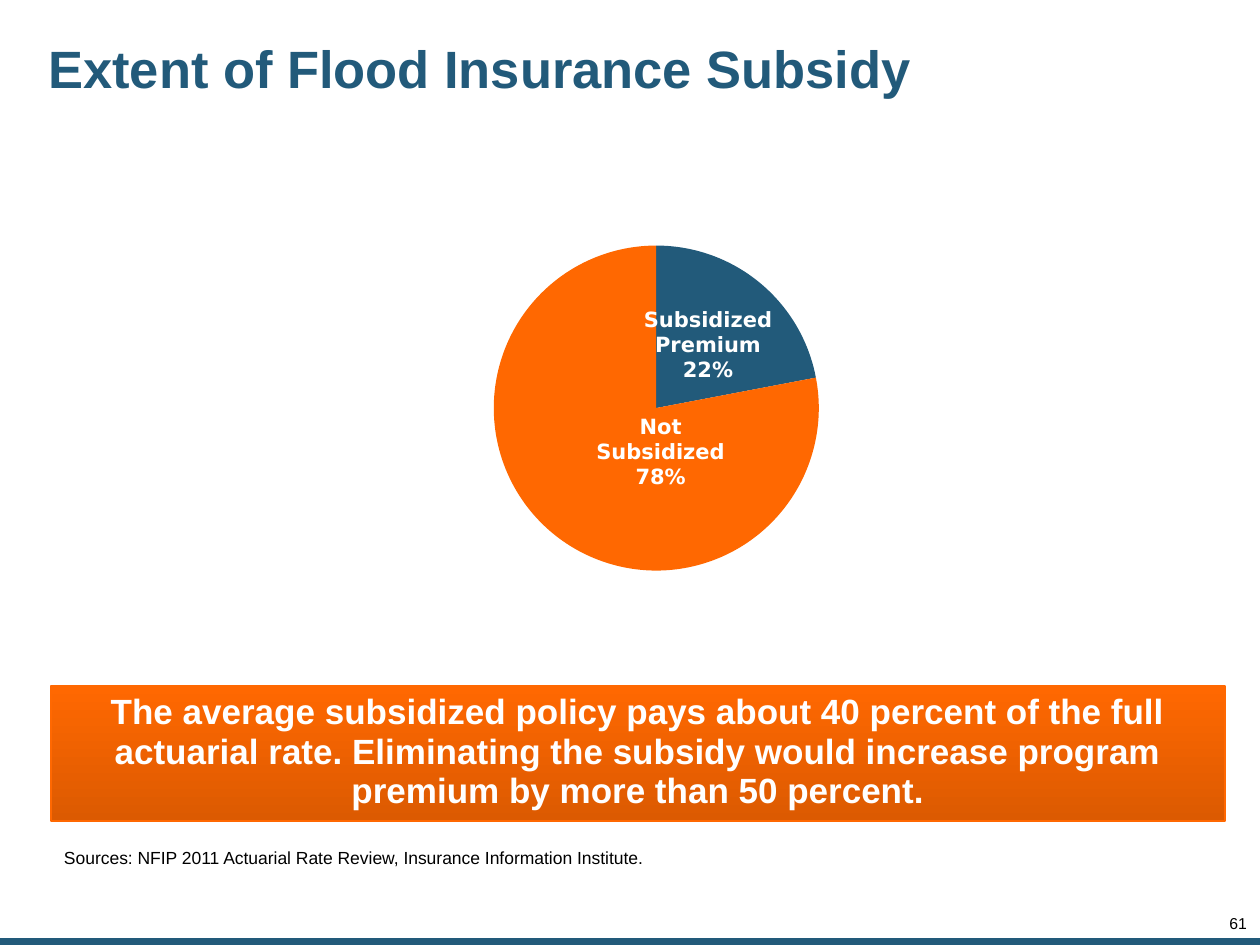
from copy import deepcopy

from lxml import etree
from pptx import Presentation
from pptx.chart.data import CategoryChartData
from pptx.dml.color import RGBColor
from pptx.enum.chart import XL_CHART_TYPE, XL_LABEL_POSITION
from pptx.enum.shapes import MSO_SHAPE
from pptx.enum.text import MSO_ANCHOR, PP_ALIGN
from pptx.oxml.ns import qn
from pptx.util import Pt

NAVY = RGBColor(0x22, 0x5A, 0x7A)
ORANGE = RGBColor(0xFF, 0x68, 0x01)
DARK_ORANGE = RGBColor(0xDC, 0x5A, 0x01)
WHITE = RGBColor(0xFF, 0xFF, 0xFF)
BLACK = RGBColor(0, 0, 0)
LEFT, CENTER, RIGHT = PP_ALIGN.LEFT, PP_ALIGN.CENTER, PP_ALIGN.RIGHT
TOP, MIDDLE = MSO_ANCHOR.TOP, MSO_ANCHOR.MIDDLE
RECT = MSO_SHAPE.RECTANGLE
PIE = XL_CHART_TYPE.PIE
LABEL_CENTER = XL_LABEL_POSITION.CENTER


def manual_layout(**values):
    """Return a c:layout element holding the given c:manualLayout values."""
    layout = etree.Element(qn("c:layout"))
    manual = etree.SubElement(layout, qn("c:manualLayout"))
    for tag, value in values.items():
        etree.SubElement(manual, qn("c:" + tag)).set("val", str(value))
    return layout


class Deck:
    font = "Arial"
    chart_font = "DejaVu Sans"

    def __init__(self, prs):
        self.s = prs.slides.add_slide(prs.slide_layouts[5])

    def set_text(self, sp, text, size, color, bold=False, align=LEFT,
                 anchor=TOP, margins=(7.2, 3.6, 7.2, 3.6), spacing=1.0):
        tf = sp.text_frame
        tf.word_wrap = True
        tf.vertical_anchor = anchor
        (tf.margin_left, tf.margin_top,
         tf.margin_right, tf.margin_bottom) = map(Pt, margins)
        p = tf.paragraphs[0]
        p.alignment = align
        p.line_spacing = spacing
        r = p.add_run()
        r.text = text
        r.font.name = self.font
        r.font.size = Pt(size)
        r.font.bold = bold
        r.font.color.rgb = color

    def title(self, x, y, w, h, text):
        sp = self.s.shapes.title
        sp.left, sp.top, sp.width, sp.height = map(Pt, (x, y, w, h))
        self.set_text(sp, text, 30, NAVY, bold=True, anchor=MIDDLE,
                      margins=(3.6,) * 4, spacing=0.9)

    def text(self, x, y, w, h, text, size, **style):
        sp = self.s.shapes.add_textbox(*map(Pt, (x, y, w, h)))
        self.set_text(sp, text, size, BLACK, **style)

    def rect(self, x, y, w, h, color):
        sp = self.s.shapes.add_shape(RECT, *map(Pt, (x, y, w, h)))
        sp.shadow.inherit = False
        sp.fill.solid()
        sp.fill.fore_color.rgb = color
        sp.line.fill.background()
        return sp

    def callout(self, x, y, w, h, text):
        sp = self.rect(x, y, w, h, ORANGE)
        sp.fill.gradient()
        sp.fill.gradient_angle = 270
        for stop, color in zip(sp.fill.gradient_stops, (ORANGE, DARK_ORANGE)):
            stop.color.rgb = color
        sp.line.color.rgb = ORANGE
        sp.line.width = Pt(1)
        self.set_text(sp, text, 20, WHITE, bold=True, align=CENTER,
                      anchor=MIDDLE, margins=(7.2, 3.6, 7.2, 5), spacing=0.95)

    def pie(self, x, y, w, h, shares, colors):
        data = CategoryChartData(number_format="0%")
        data.categories = list(shares)
        data.add_series("Series 1", list(shares.values()))
        chart = self.s.shapes.add_chart(PIE, *map(Pt, (x, y, w, h)), data).chart
        chart.has_legend = False
        chart.has_title = False
        chart.font.name = self.chart_font
        chart.font.size = Pt(18)
        chart.font.color.rgb = BLACK
        plot = chart.plots[0]
        plot.vary_by_categories = True
        series = plot.series[0]
        for i, color in enumerate(colors):
            fill = series.points[i].format.fill
            fill.solid()
            fill.fore_color.rgb = color
        self.pie_labels(series.data_labels)

        # Place the pie within the chart frame
        area = chart.element.find(".//" + qn("c:plotArea"))
        for old in area.findall(qn("c:layout")):
            area.remove(old)
        area.insert(0, manual_layout(
            layoutTarget="inner", xMode="edge", yMode="edge",
            x=0.38, y=0.17, w=0.29, h=0.72))

    def pie_labels(self, labels):
        labels.show_value = True
        labels.show_category_name = True
        labels.show_percentage = False
        labels.number_format = "0%"
        labels.number_format_is_linked = False
        labels.position = LABEL_CENTER
        labels.font.name = self.chart_font
        labels.font.size = Pt(12)
        labels.font.bold = True
        labels.font.color.rgb = WHITE

        # Category and value on separate lines
        group = labels._element
        separator = etree.Element(qn("c:separator"))
        separator.text = "\n"
        group.find(qn("c:showBubbleSize")).addnext(separator)

        # Shift the label of the larger slice towards the middle
        label = etree.Element(qn("c:dLbl"))
        etree.SubElement(label, qn("c:idx")).set("val", "1")
        label.append(manual_layout(x=0.05, y=-0.04))
        for child in group:
            if child.tag != qn("c:showLeaderLines"):
                label.append(deepcopy(child))
        group.insert(0, label)


def main():
    prs = Presentation()
    prs.slide_width, prs.slide_height = Pt(720), Pt(540)
    deck = Deck(prs)

    # Footer bar and title
    deck.rect(0, 536, 720, 4, NAVY)
    deck.title(24, 7, 582.5, 67.5, "Extent of Flood Insurance Subsidy")

    # Share of subsidized policies
    deck.pie(38, 96.5, 642, 258,
             {"Subsidized Premium": 0.22, "Not Subsidized": 0.78},
             (NAVY, ORANGE))

    # Page number, key message and sources
    deck.text(677.5, 524, 35, 9.5, "61", 9, align=RIGHT,
              margins=(0,) * 4, spacing=0.85)
    deck.callout(29, 392, 671, 77,
                 "The average subsidized policy pays about 40 percent of the "
                 "full actuarial rate. Eliminating the subsidy would increase "
                 "program premium by more than 50 percent.")
    deck.text(29.5, 480.5, 551, 19.5,
              "Sources: NFIP 2011 Actuarial Rate Review, "
              "Insurance Information Institute.", 10)

    prs.save("out.pptx")


if __name__ == "__main__":
    main()
